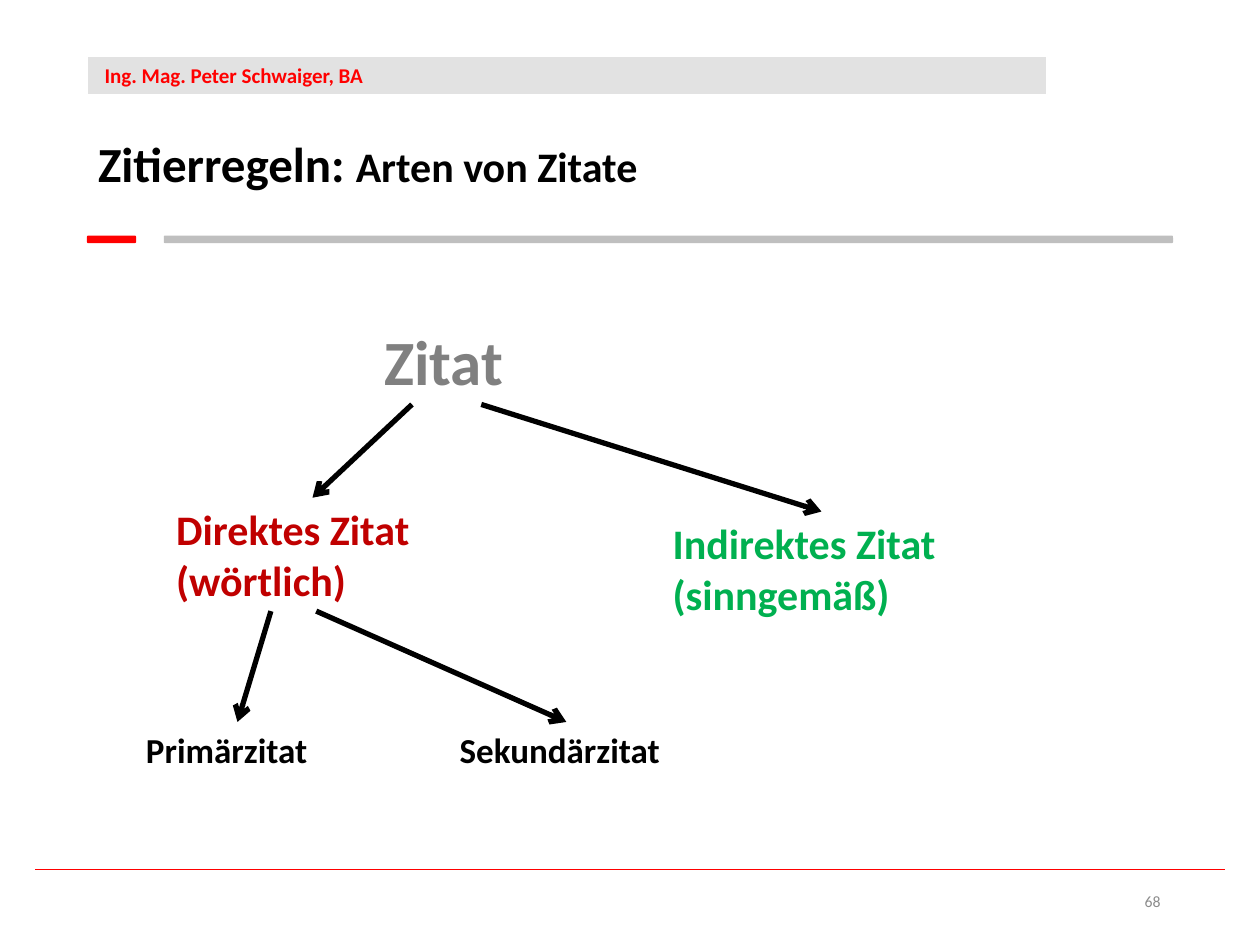
"""Build the slide on the kinds of citation as a small tree diagram."""
from lxml import etree
from pptx import Presentation
from pptx import util as u
from pptx.dml.color import RGBColor
from pptx.enum import shapes, text
from pptx.oxml.ns import qn

FONT = "Calibri"
COLORS = {"black": "000000", "white": "FFFFFF", "red": "FF0000", "panel": "D9D9D9",
          "rule": "BFBFBF", "gray": "808080", "number": "8C8C8C",
          "green": "00B050", "darkred": "C00000"}

HEADER = "Ing. Mag. Peter Schwaiger, BA"
TITLE = [("Zitierregeln: ", 28), ("Arten von Zitate", 24)]
PAGE = "68"
BARS = [((1.3, 1.87, 8.01, 0.06), "rule"), ((0.69, 1.87, 0.39, 0.06), "red")]
NODES = {
    "quote": (["Zitat"], (2.95, 2.51, 1.26, 0.71), 36, "gray"),
    "indirect": (["Indirektes Zitat", "(sinngemäß)"], (5.24, 4.06, 2.56, 0.91), 24, "green"),
    "direct": (["Direktes Zitat", "(wörtlich)"], (1.3, 3.95, 2.36, 0.91), 24, "darkred"),
    "primary": (["Primärzitat"], (1.06, 5.73, 1.65, 0.44), 20, "black"),
    "secondary": (["Sekundärzitat"], (3.55, 5.73, 1.89, 0.44), 20, "black"),
}
ARROWS = [((3.82, 3.21), "indirect"), ((2.15, 4.85), "primary"),
          ((2.51, 4.85), "secondary"), ((3.27, 3.21), "direct")]


def rgb(name):
    return RGBColor.from_string(COLORS[name])


def inches(values):
    return [u.Inches(v) for v in values]


def style(font, size, color, bold=True):
    font.name, font.size, font.bold = FONT, u.Pt(size), bold
    font.color.rgb = rgb(color)


def add_bar(s, kind, box, color):
    sp = s.shapes.add_shape(kind, *inches(box))
    sp.shadow.inherit = False
    sp.fill.solid()
    sp.fill.fore_color.rgb = rgb(color)
    sp.line.fill.background()
    return sp


def add_text(s, box, lines, size, color, bold=True, anchor=text.MSO_ANCHOR.TOP):
    sp = s.shapes.add_textbox(*inches(box))
    tf = sp.text_frame
    tf.word_wrap, tf.vertical_anchor = True, anchor
    tf.text = "\n".join(lines)
    for p in tf.paragraphs:
        style(p.font, size, color, bold)
    return sp


def add_line(s, start, end, color, width):
    c = s.shapes.add_connector(shapes.MSO_CONNECTOR.STRAIGHT, *inches(start + end))
    c.line.color.rgb, c.line.width = rgb(color), u.Pt(width)
    etree.SubElement(c._element.spPr, qn("a:effectLst"))
    return c


def add_header(s):
    sp = add_bar(s, shapes.MSO_SHAPE.RECTANGLE, (0.69, 0.45, 7.62, 0.3), "panel")
    color = sp.fill._xPr.find(qn("a:solidFill"))[0]
    etree.SubElement(color, qn("a:alpha"), val="75000")
    sp.line.color.rgb, sp.line.width = rgb("white"), u.Pt(0.75)
    tf = sp.text_frame
    tf.margin_left = u.Inches(0.14)
    tf.vertical_anchor = text.MSO_ANCHOR.TOP
    p = tf.paragraphs[0]
    p.text, p.alignment = HEADER, text.PP_ALIGN.LEFT
    style(p.font, 12, "red")


def add_title(s):
    sp = add_text(s, (0.68, 0.84, 7.62, 0.97), [""], 28, "black", anchor=text.MSO_ANCHOR.MIDDLE)
    p = sp.text_frame.paragraphs[0]
    p.line_spacing = 0.9
    for words, size in TITLE:
        r = p.add_run()
        r.text = words
        style(r.font, size, "black")


def add_tree(s):
    nodes = {name: add_text(s, box, lines, size, color)
             for name, (lines, box, size, color) in NODES.items()}
    for start, target in ARROWS:
        left, top, width, _ = NODES[target][1]
        c = add_line(s, start, (left + width / 2, top), "black", 3)
        c.end_connect(nodes[target], 0)
        etree.SubElement(c.line._get_or_add_ln(), qn("a:tailEnd"), type="arrow")


def main():
    prs = Presentation()
    prs.slide_width, prs.slide_height = inches((10, 7.5))
    s = prs.slides.add_slide(prs.slide_layouts[6])
    add_header(s)
    for box, color in BARS:
        add_bar(s, shapes.MSO_SHAPE.ROUNDED_RECTANGLE, box, color)
    add_line(s, (0.28, 6.9), (9.72, 6.9), "red", 1)
    add_title(s)
    number = add_text(s, (7.06, 6.95, 2.25, 0.4), [PAGE], 9, "number", False,
                      text.MSO_ANCHOR.MIDDLE)
    number.text_frame.paragraphs[0].alignment = text.PP_ALIGN.RIGHT
    add_tree(s)
    prs.save("out.pptx")


if __name__ == "__main__":
    main()
